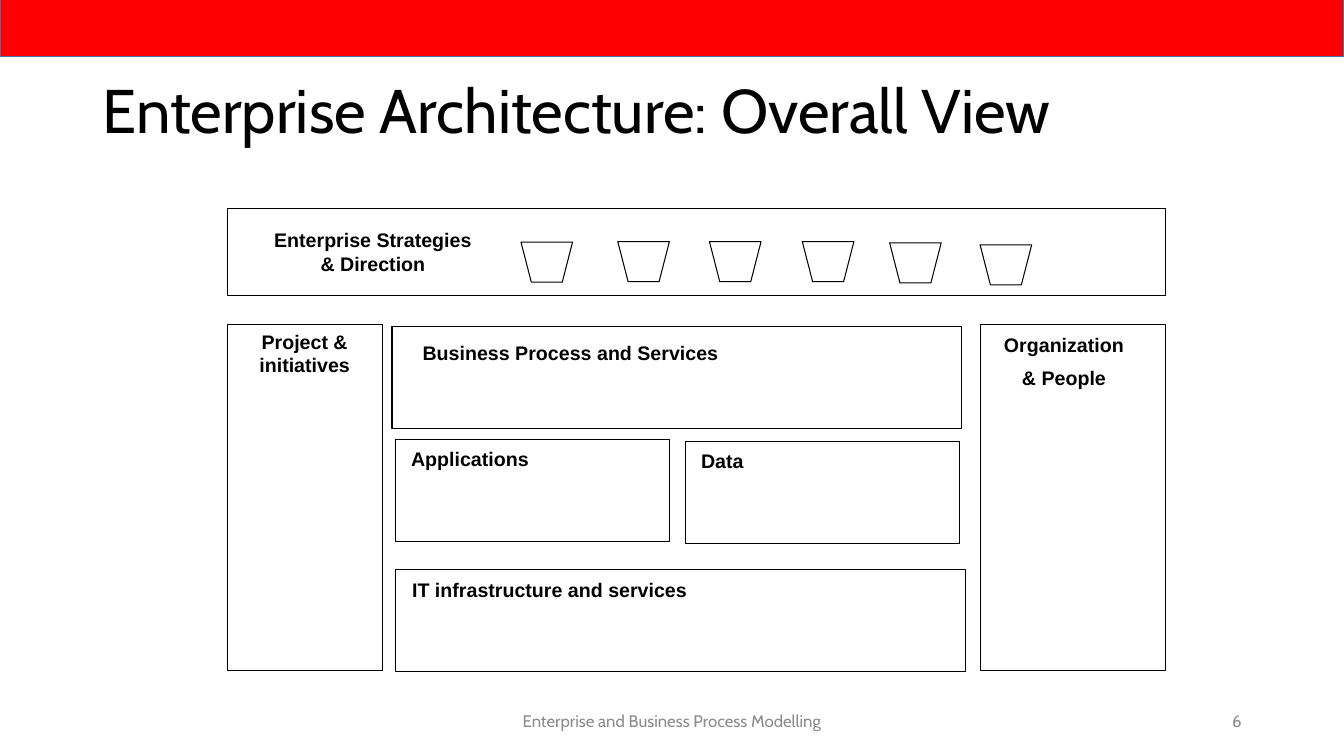
from dataclasses import dataclass

from pptx import Presentation
from pptx.dml.color import RGBColor
from pptx.enum.shapes import MSO_SHAPE
from pptx.enum.text import MSO_ANCHOR, MSO_AUTO_SIZE, PP_ALIGN
from pptx.util import Cm, Pt

RECT, CUP = MSO_SHAPE.RECTANGLE, MSO_SHAPE.FLOWCHART_MANUAL_OPERATION
TOP, MID = MSO_ANCHOR.TOP, MSO_ANCHOR.MIDDLE
LEFT, MIDDLE, RIGHT = PP_ALIGN.LEFT, PP_ALIGN.CENTER, PP_ALIGN.RIGHT
FIXED = MSO_AUTO_SIZE.NONE


@dataclass(frozen=True)
class Theme:
    """Colours, fonts and type sizes of the slide."""
    ink: RGBColor = RGBColor(0, 0, 0)
    grey: RGBColor = RGBColor(0x8C, 0x8C, 0x8C)
    red: RGBColor = RGBColor(0xFF, 0, 0)
    edge: RGBColor = RGBColor(0x43, 0x73, 0x9E)
    head: str = "Cabin"
    body: str = "Arial"
    big: int = 44
    mid: int = 14
    small: int = 12


THEME = Theme()


def inside(box, part):
    """Return a part's box, moved from its parent's corner to the slide."""
    return (box[0] + part[0], box[1] + part[1], part[2], part[3])


def style(frame, text, font, size, color, align, anchor, bold=False):
    """Fill a text frame and format every run in it."""
    frame.text = text
    frame.word_wrap = True
    frame.auto_size = FIXED
    frame.vertical_anchor = anchor
    for item in frame.paragraphs:
        item.alignment = align
        for run in item.runs:
            run.font.name = font
            run.font.size = Pt(size)
            run.font.bold = bold
            run.font.color.rgb = color


def add_text(slide, box, *args, **extra):
    """Add a text box and return its frame."""
    frame = slide.shapes.add_textbox(*map(Cm, box)).text_frame
    style(frame, *args, **extra)
    return frame


def add_form(slide, kind, box, line=THEME.ink, width=0.75, fill=None):
    """Add an outlined shape, hollow unless a fill is given."""
    shape = slide.shapes.add_shape(kind, *map(Cm, box))
    shape.shadow.inherit = False
    shape.line.color.rgb = line
    shape.line.width = Pt(width)
    if fill is None:
        shape.fill.background()
    else:
        shape.fill.solid()
        shape.fill.fore_color.rgb = fill


def add_panel(slide, box, text, label):
    """Add a framed panel with a bold label placed from its corner."""
    add_form(slide, RECT, box)
    frame = add_text(slide, inside(box, label), text, THEME.body, THEME.mid,
                     THEME.ink, MIDDLE, TOP, bold=True)
    for item in frame.paragraphs[1:]:
        item.space_before = Pt(7.2)


def add_header(slide, box):
    """Add the red band and set the title below it."""
    add_form(slide, RECT, inside(box, (0, -0.13, box[2], 1.55)),
             THEME.edge, 1, THEME.red)
    title = slide.shapes.title
    place = inside(box, (2.33, 1.02, 27.53, 3.68))
    title.left, title.top, title.width, title.height = map(Cm, place)
    style(title.text_frame, "Enterprise Architecture: Overall View",
          THEME.head, THEME.big, THEME.ink, LEFT, MID)
    title.text_frame.paragraphs[0].line_spacing = 0.9


def add_strategy(slide, box):
    """Add the strategy panel with its row of cups."""
    add_panel(slide, box, "Enterprise Strategies & Direction",
              (0.84, 0.36, 5.64, 1.45))
    cups = ((7.39, 0.84), (9.83, 0.83), (12.14, 0.83),
            (14.48, 0.83), (16.68, 0.86), (18.96, 0.91))
    for left, top in cups:
        add_form(slide, CUP, inside(box, (left, top, 1.3, 1.01)))


def add_layers(slide, box):
    """Add the side columns and the layers between them."""
    wide, half, high = 14.36, 6.91, 2.57
    tall = box[3]
    panels = (
        ("Project & initiatives", (0, 0, 3.91, tall), (0.3, 0, 3.28, 1.45)),
        ("Organization\n& People", (18.97, 0, 4.67, tall),
         (0.1, 0.08, 4.01, 1.75)),
        ("Business Process and Services", (4.14, 0.05, wide, high),
         (-0.3, 0.23, 9.6, 0.86)),
        ("Applications", (4.23, 2.9, half, high), (-0.13, 0.05, 4.01, 0.86)),
        ("Data", (11.53, 2.95, half, high), (-1.07, 0.05, 4.01, 0.86)),
        ("IT infrastructure and services", (4.23, 6.17, wide, high),
         (-0.13, 0.1, 8.03, 0.86)),
    )
    for text, place, label in panels:
        add_panel(slide, inside(box, place), text, label)


def add_footer(slide, box):
    """Add the course name and the page number."""
    notes = (("Enterprise and Business Process Modelling", 11.22, 11.43, MIDDLE),
             ("6", 23.92, 7.62, RIGHT))
    for text, left, width, align in notes:
        add_text(slide, inside(box, (left, 0, width, box[3])), text,
                 THEME.head, THEME.small, THEME.grey, align, MID)


def main():
    """Build the slide and save it."""
    deck = Presentation()
    deck.slide_width, deck.slide_height = Cm(33.87), Cm(19.05)
    slide = deck.slides.add_slide(deck.slide_layouts[5])
    add_header(slide, (0, 0, 33.87, 4.7))
    add_strategy(slide, (5.74, 5.26, 23.64, 2.18))
    add_layers(slide, (5.74, 8.18, 23.64, 8.71))
    add_footer(slide, (0, 17.66, 33.87, 1.01))
    deck.save("out.pptx")


if __name__ == "__main__":
    main()
